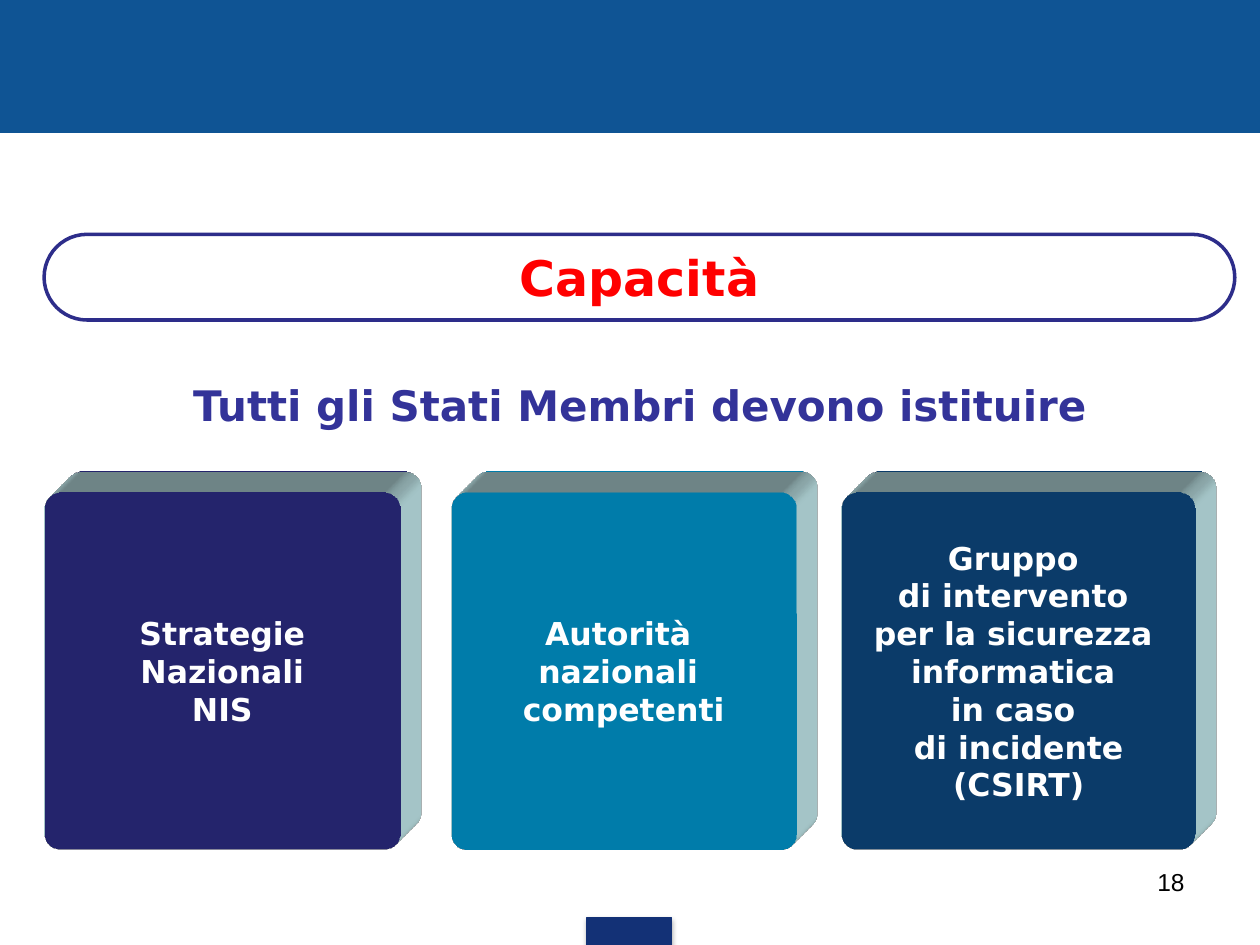
from dataclasses import dataclass

from lxml.etree import SubElement
from pptx import Presentation
from pptx.dml.color import RGBColor
from pptx.enum.shapes import MSO_SHAPE
from pptx.enum.text import MSO_ANCHOR, PP_ALIGN
from pptx.oxml.ns import qn
from pptx.util import Inches, Pt

COLORS = {
    "blue": "0F5494", "tab": "133176", "outline": "2D2D8A",
    "white": "FFFFFF", "black": "000000", "red": "FF0000",
    "indigo": "333399", "cyan": "00B0F0", "block_side": "BBE0E3",
}
BLOCK_TOP, BLOCK_HEIGHT = 3.91, 2.83


@dataclass
class Block:
    left: float
    width: float
    color: str
    text: str


BLOCKS = [
    Block(0.35, 2.83, "indigo", "Strategie\vNazionali\vNIS"),
    Block(3.58, 2.74, "cyan", "Autorità \vnazionali \vcompetenti"),
    Block(6.68, 2.81, "blue",
          "Gruppo \vdi intervento \vper la sicurezza \vinformatica \v"
          "in caso \vdi incidente\n(CSIRT)"),
]


def rgb(name: str) -> RGBColor:
    return RGBColor.from_string(COLORS[name])


def add_box(slide, kind, left: float, top: float, width: float, height: float,
            fill: str, line: str | None = None, line_width: float = 0.75):
    shape = slide.shapes.add_shape(
        kind, Inches(left), Inches(top), Inches(width), Inches(height))
    shape.shadow.inherit = False
    shape.fill.solid()
    shape.fill.fore_color.rgb = rgb(fill)
    if line:
        shape.line.color.rgb = rgb(line)
        shape.line.width = Pt(line_width)
    else:
        shape.line.fill.background()
    return shape


def write(shape, text: str, size: float, color: str, font: str = "DejaVu Sans",
          bold: bool = True, align=PP_ALIGN.CENTER,
          anchor=MSO_ANCHOR.MIDDLE, wrap: bool = False) -> None:
    frame = shape.text_frame
    frame.text = text
    frame.word_wrap = wrap
    frame.vertical_anchor = anchor
    for paragraph in frame.paragraphs:
        paragraph.alignment = align
        paragraph.font.name = font
        paragraph.font.size = Pt(size)
        paragraph.font.bold = bold
        paragraph.font.color.rgb = rgb(color)


def add_text(slide, left: float, top: float, width: float, height: float,
             text: str, size: float, color: str, **style) -> None:
    box = slide.shapes.add_textbox(
        Inches(left), Inches(top), Inches(width), Inches(height))
    write(box, text, size, color, anchor=MSO_ANCHOR.TOP, wrap=True, **style)


def extrude(shape) -> None:
    """Give a shape an oblique depth towards the top right."""
    properties = shape._element.spPr
    scene = SubElement(properties, qn("a:scene3d"))
    SubElement(scene, qn("a:camera"), prst="legacyObliqueTopRight")
    SubElement(scene, qn("a:lightRig"), rig="legacyFlat3", dir="b")
    solid = SubElement(properties, qn("a:sp3d"), extrusionH="430200",
                       prstMaterial="legacyMatte")
    for bevel in ("a:bevelT", "a:bevelB"):
        SubElement(solid, qn(bevel), w="13500", h="13500", prst="angle")
    side = SubElement(solid, qn("a:extrusionClr"))
    SubElement(side, qn("a:srgbClr"), val=COLORS["block_side"])


def add_block(slide, block: Block) -> None:
    shape = add_box(slide, MSO_SHAPE.ROUNDED_RECTANGLE, block.left, BLOCK_TOP,
                    block.width, BLOCK_HEIGHT, block.color)
    shape.adjustments[0] = 0.047
    extrude(shape)
    write(shape, block.text, 18, "white")


def add_soft_shadow(shape) -> None:
    effects = shape._element.spPr.find(qn("a:effectLst"))
    shadow = SubElement(effects, qn("a:outerShdw"), blurRad=str(Pt(3.1)),
                        dist=str(Pt(1.8)), dir="5400000", rotWithShape="0")
    color = SubElement(shadow, qn("a:srgbClr"), val=COLORS["black"])
    SubElement(color, qn("a:alpha"), val="35000")


def main() -> None:
    presentation = Presentation()
    presentation.slide_width, presentation.slide_height = Inches(10), Inches(7.5)
    slide = presentation.slides.add_slide(presentation.slide_layouts[6])

    add_box(slide, MSO_SHAPE.RECTANGLE, 0, 0, 10, 1.05, "blue", "blue")
    tab = add_box(slide, MSO_SHAPE.RECTANGLE, 4.66, 7.28, 0.67, 0.22, "tab", "tab")
    add_soft_shadow(tab)
    add_text(slide, 7.17, 6.83, 2.33, 0.52, "18", 14, "black",
             font="Arial", bold=False, align=PP_ALIGN.RIGHT)

    title = add_box(slide, MSO_SHAPE.ROUNDED_RECTANGLE, 0.35, 1.86, 9.45, 0.68,
                    "white", "outline", 2)
    title.adjustments[0] = 0.5
    write(title, "Capacità", 28, "red")
    add_text(slide, 1.33, 2.96, 7.5, 0.5,
             "Tutti gli Stati Membri devono istituire", 24, "indigo")

    for block in BLOCKS:
        add_block(slide, block)
    presentation.save("out.pptx")


if __name__ == "__main__":
    main()
